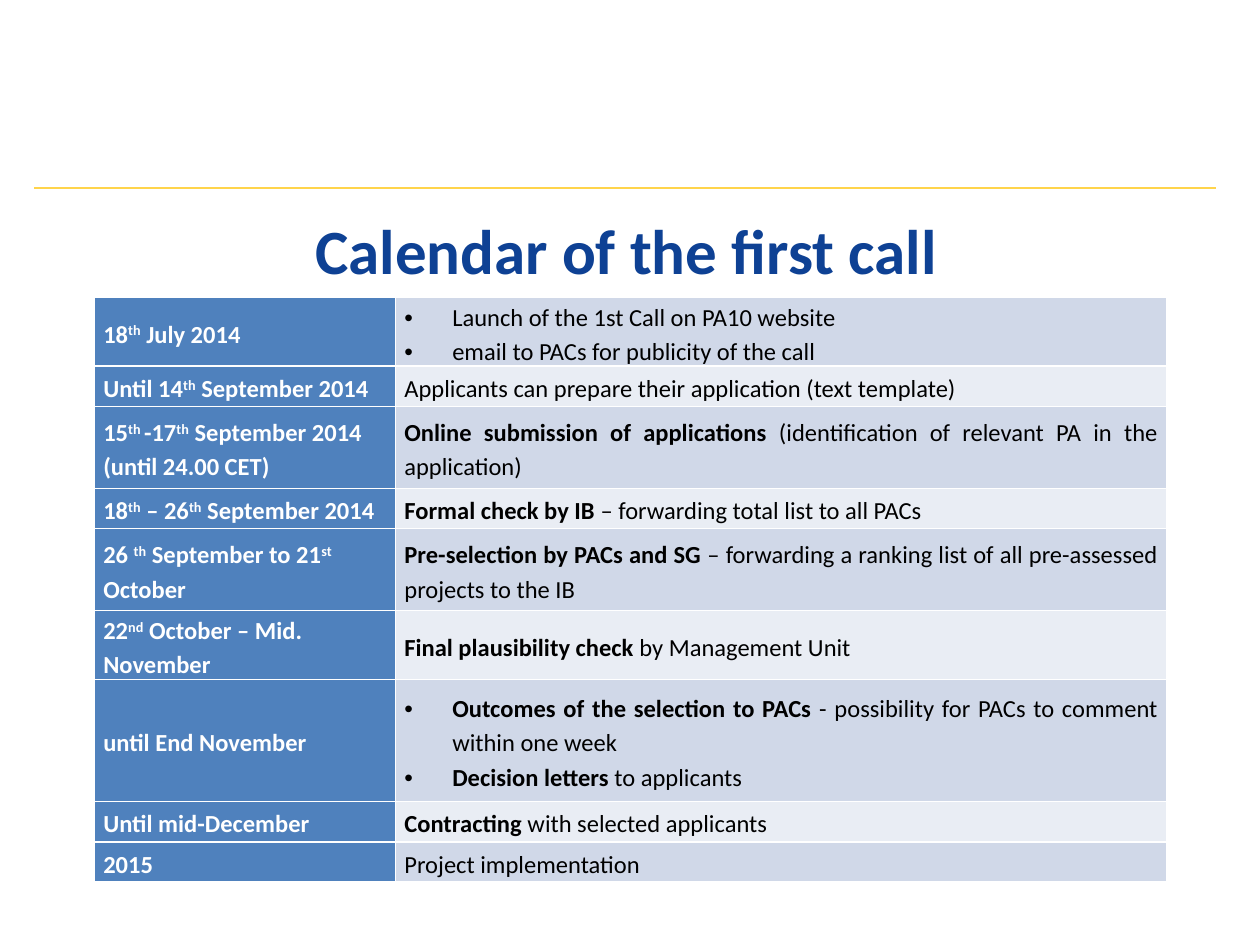
from lxml.etree import SubElement
from pptx import Presentation
from pptx.dml.color import RGBColor
from pptx.enum.shapes import MSO_CONNECTOR
from pptx.enum.text import MSO_ANCHOR, MSO_AUTO_SIZE, PP_ALIGN
from pptx.oxml import parse_xml
from pptx.oxml.ns import nsdecls, qn
from pptx.util import Inches, Pt

BLUE, WHITE, BLACK = "4F81BD", "FFFFFF", "000000"
BANDS = ["D0D8E8", "E9EDF4"]


def color(value):
    return RGBColor.from_string(value)


def add_text(para, text, size=14, fill=BLACK, bold=False, marked="bold"):
    """Write text as runs; parts between bars are bold or superscript."""
    for index, part in enumerate(text.split("|")):
        if not part:
            continue
        span = para.add_run()
        span.text = part
        span.font.name = "Calibri"
        span.font.size = Pt(size)
        span.font.color.rgb = color(fill)
        is_marked = index % 2 == 1
        span.font.bold = bold or (is_marked and marked == "bold")
        if is_marked and marked == "superscript":
            span._r.get_or_add_rPr().set("baseline", "30000")


# Row height, date with |superscripts|, paragraphs with |bold| parts
calendar = [
    (0.32, "18|th| July 2014",
     ["Launch of the 1st Call on PA10 website ",
      "email to PACs for publicity of the call"]),
    (0.32, "Until 14|th| September 2014",
     ["Applicants can prepare their application (text template)"]),
    (0.65, "15|th |-17|th| September 2014 (until 24.00 CET)",
     ["|Online submission of applications| "
      "(identification of relevant PA in the application)"]),
    (0.32, "18|th| – 26|th| September 2014",
     ["|Formal check by IB |– forwarding total list to all PACs"]),
    (0.65, "26 |th| September to 21|st| October",
     ["|Pre-selection by PACs and SG |– forwarding a ranking list "
      "of all pre-assessed projects to the IB"]),
    (0.32, "22|nd| October – Mid. November",
     ["|Final plausibility check |by Management Unit "]),
    (0.97, "until End November",
     ["|Outcomes of the selection to PACs |"
      "- possibility for PACs to comment within one week",
      "|Decision letters |to applicants"]),
    (0.32, "Until mid-December", ["|Contracting| with selected applicants"]),
    (0.32, "2015", ["Project implementation"]),
]

deck = Presentation()
deck.slide_width, deck.slide_height = Inches(10), Inches(7.5)
page = deck.slides.add_slide(deck.slide_layouts[6])

rule = page.shapes.add_connector(
    MSO_CONNECTOR.STRAIGHT, Inches(9.65), Inches(1.49), Inches(0.27), Inches(1.49))
rule.line.color.rgb = color("FFD44B")
rule.line.width = Pt(1.25)
SubElement(rule._element.spPr, qn("a:effectLst"))

title = page.shapes.add_textbox(Inches(1.09), Inches(1.63), Inches(7.64), Inches(0.71))
title.text_frame.word_wrap = True
title.text_frame.auto_size = MSO_AUTO_SIZE.SHAPE_TO_FIT_TEXT
heading = title.text_frame.paragraphs[0]
heading.alignment = PP_ALIGN.CENTER
heading._p.get_or_add_pPr().set("marL", str(Inches(0.12)))
add_text(heading, "Calendar of the first call", size=36, fill="0E4194", bold=True)

frame = page.shapes.add_table(
    len(calendar), 2, Inches(0.75), Inches(2.36), Inches(8.5), Inches(4.66))
table = frame.table
table.first_row = table.horz_banding = False
table.columns[0].width, table.columns[1].width = Inches(2.39), Inches(6.12)

for row, (height, date, steps) in enumerate(calendar):
    table.rows[row].height = Inches(height)
    for column, lines in enumerate([[date], steps]):
        cell = table.cell(row, column)
        cell.vertical_anchor = MSO_ANCHOR.MIDDLE
        cell.margin_left = cell.margin_right = Inches(0.07)
        cell.margin_top, cell.margin_bottom = Inches(0.01), 0
        for side in ("lnL", "lnR", "lnT", "lnB"):
            cell._tc.get_or_add_tcPr().append(parse_xml(
                f'<a:{side} {nsdecls("a")} w="{Pt(1)}"><a:solidFill>'
                f'<a:srgbClr val="{WHITE}"/></a:solidFill></a:{side}>'))
        cell.fill.solid()
        cell.fill.fore_color.rgb = color(BANDS[row % 2] if column else BLUE)

        for index, line in enumerate(lines):
            text_frame = cell.text_frame
            para = text_frame.add_paragraph() if index else text_frame.paragraphs[0]
            if len(lines) > 1:
                properties = para._p.get_or_add_pPr()
                properties.set("marL", str(Inches(0.38)))
                properties.set("indent", str(-Inches(0.38)))
                SubElement(properties, qn("a:buFont")).set("typeface", "Arial")
                SubElement(properties, qn("a:buChar")).set("char", "•")
            para.line_spacing = 1.15
            if index == len(lines) - 1:
                para.space_after = Pt(6)
            if column:
                para.alignment = PP_ALIGN.JUSTIFY
                add_text(para, line)
            else:
                add_text(para, line, fill=WHITE, bold=True, marked="superscript")

deck.save("out.pptx")
